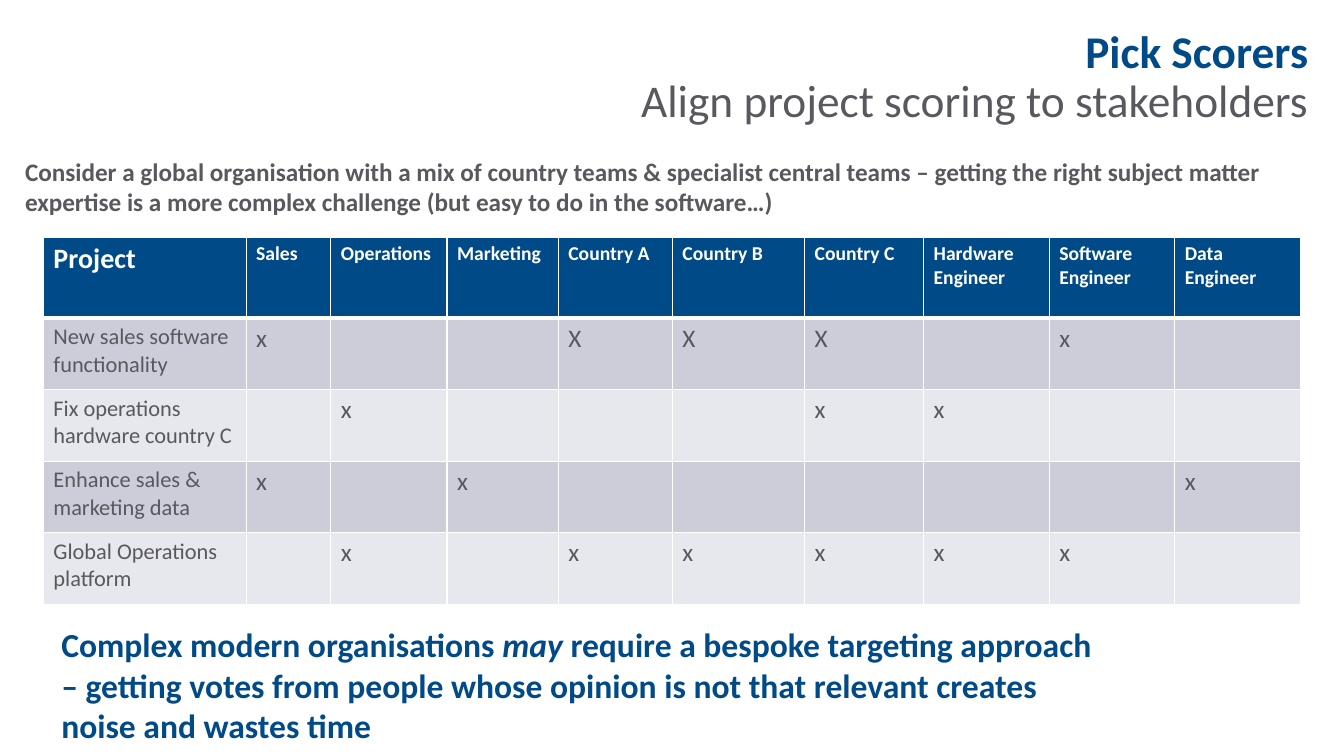
import pptx
import pptx.dml.color
import pptx.enum.text
import pptx.oxml
import pptx.oxml.ns
import pptx.util
from dataclasses import dataclass

Pt = pptx.util.Pt


@dataclass(frozen=True)
class Theme:
    font: str = "Calibri"
    navy: str = "004A87"
    grey: str = "59585E"
    white: str = "FFFFFF"
    bands: tuple = ("CCCDD9", "E7E8ED")
    title: float = 32.4
    takeaway: float = 24
    corner: float = 20
    body: float = 18
    project: float = 16
    role: float = 14
    rule: float = 1
    header_rule: float = 3


THEME = Theme()

ROLES = ["Sales", "Operations", "Marketing", "Country A", "Country B", "Country C",
         "Hardware Engineer", "Software Engineer", "Data Engineer"]
# One character per role; a dot leaves the cell empty.
SCORERS = {
    "New sales software functionality": "x..XXX.x.",
    "Fix operations hardware country C": ".x...xx..",
    "Enhance sales & marketing data": "x.x.....x",
    "Global Operations platform": ".x.xxxxx.",
}
COLUMN_WIDTHS = [144.8, 60.5, 83, 79.5, 81.5, 94.5, 85, 89.7, 89.7, 90]
HEADER_HEIGHT, ROW_HEIGHT = 58, 51.1


def rgb(color):
    return pptx.dml.color.RGBColor.from_string(color)


def add_run(p, text, size, color, bold=False, italic=False):
    r = p.add_run()
    r.text = text
    r.font.name = THEME.font
    r.font.size = Pt(size)
    r.font.color.rgb = rgb(color)
    r.font.bold = bold
    r.font.italic = italic


def set_borders(cell, top, bottom):
    tcPr = cell._tc.get_or_add_tcPr()
    widths = {"lnL": THEME.rule, "lnR": THEME.rule, "lnT": top, "lnB": bottom}
    for side, width in widths.items():
        tcPr.append(pptx.oxml.parse_xml(
            f'<a:{side} {pptx.oxml.ns.nsdecls("a")} w="{Pt(width)}"><a:solidFill>'
            f'<a:srgbClr val="{THEME.white}"/></a:solidFill></a:{side}>'))


def fill_translucent(sp, color, percent):
    sp.fill.solid()
    sp.fill.fore_color.rgb = rgb(color)
    srgb = sp._element.spPr.find(".//" + pptx.oxml.ns.qn("a:srgbClr"))
    srgb.append(pptx.oxml.parse_xml(
        f'<a:alpha {pptx.oxml.ns.nsdecls("a")} val="{percent * 1000}"/>'))


def place_title(s, x, y, w, h):
    sp = s.shapes.title
    sp.left, sp.top, sp.width, sp.height = Pt(x), Pt(y), Pt(w), Pt(h)
    fill_translucent(sp, THEME.white, 70)
    tf = sp.text_frame
    tf.word_wrap = True
    tf.auto_size = pptx.enum.text.MSO_AUTO_SIZE.NONE
    tf.vertical_anchor = pptx.enum.text.MSO_ANCHOR.MIDDLE
    p = tf.paragraphs[0]
    p.alignment = pptx.enum.text.PP_ALIGN.RIGHT
    p.line_spacing = 0.9
    add_run(p, "Pick Scorers ", THEME.title, THEME.navy, bold=True)
    p.add_line_break()
    add_run(p, "Align project scoring to stakeholders ", THEME.title, THEME.grey)


def add_text(s, x, y, w, h, runs, size, color):
    """Add a bold text box from (text, italic) pairs."""
    tf = s.shapes.add_textbox(Pt(x), Pt(y), Pt(w), Pt(h)).text_frame
    tf.word_wrap = True
    for text, italic in runs:
        add_run(tf.paragraphs[0], text, size, color, bold=True, italic=italic)


def cell_style(row, col):
    """Return text size, text colour and fill for a table position."""
    if row == 0:
        return THEME.role if col else THEME.corner, THEME.white, THEME.navy
    return THEME.body if col else THEME.project, THEME.grey, THEME.bands[(row - 1) % 2]


def add_scorer_table(s, x, y):
    rows = [["Project", *ROLES]]
    rows += [[project, *marks.replace(".", " ")] for project, marks in SCORERS.items()]
    heights = [HEADER_HEIGHT] + [ROW_HEIGHT] * len(SCORERS)
    table = s.shapes.add_table(len(rows), len(COLUMN_WIDTHS), Pt(x), Pt(y),
                               Pt(sum(COLUMN_WIDTHS)), Pt(sum(heights))).table
    for column, width in zip(table.columns, COLUMN_WIDTHS):
        column.width = Pt(width)
    for i, (values, height) in enumerate(zip(rows, heights)):
        table.rows[i].height = Pt(height)
        for j, value in enumerate(values):
            cell = table.cell(i, j)
            size, color, fill = cell_style(i, j)
            set_borders(cell, THEME.header_rule if i == 1 else THEME.rule,
                        THEME.header_rule if i == 0 else THEME.rule)
            cell.fill.solid()
            cell.fill.fore_color.rgb = rgb(fill)
            if value.strip():
                add_run(cell.text_frame.paragraphs[0], value, size, color, bold=i == 0)


def main():
    prs = pptx.Presentation()
    prs.slide_width, prs.slide_height = Pt(960), Pt(540)
    s = prs.slides.add_slide(prs.slide_layouts[5])
    place_title(s, 309, 14, 640, 83.5)
    add_scorer_table(s, 31, 169.3)
    add_text(s, 36.7, 442.4, 754, 94.5, [
        ("Complex modern organisations", False),
        (" may ", True),
        ("require a bespoke targeting approach – getting votes from people whose "
         "opinion is not that relevant creates noise and wastes time", False),
    ], THEME.takeaway, THEME.navy)
    add_text(s, 10.8, 108, 925, 51, [
        ("Consider a global organisation with a mix of country teams & specialist "
         "central teams – getting the right subject matter expertise is a more "
         "complex challenge (but easy to do in the software…)", False),
    ], THEME.body, THEME.grey)
    prs.save("out.pptx")


if __name__ == "__main__":
    main()
